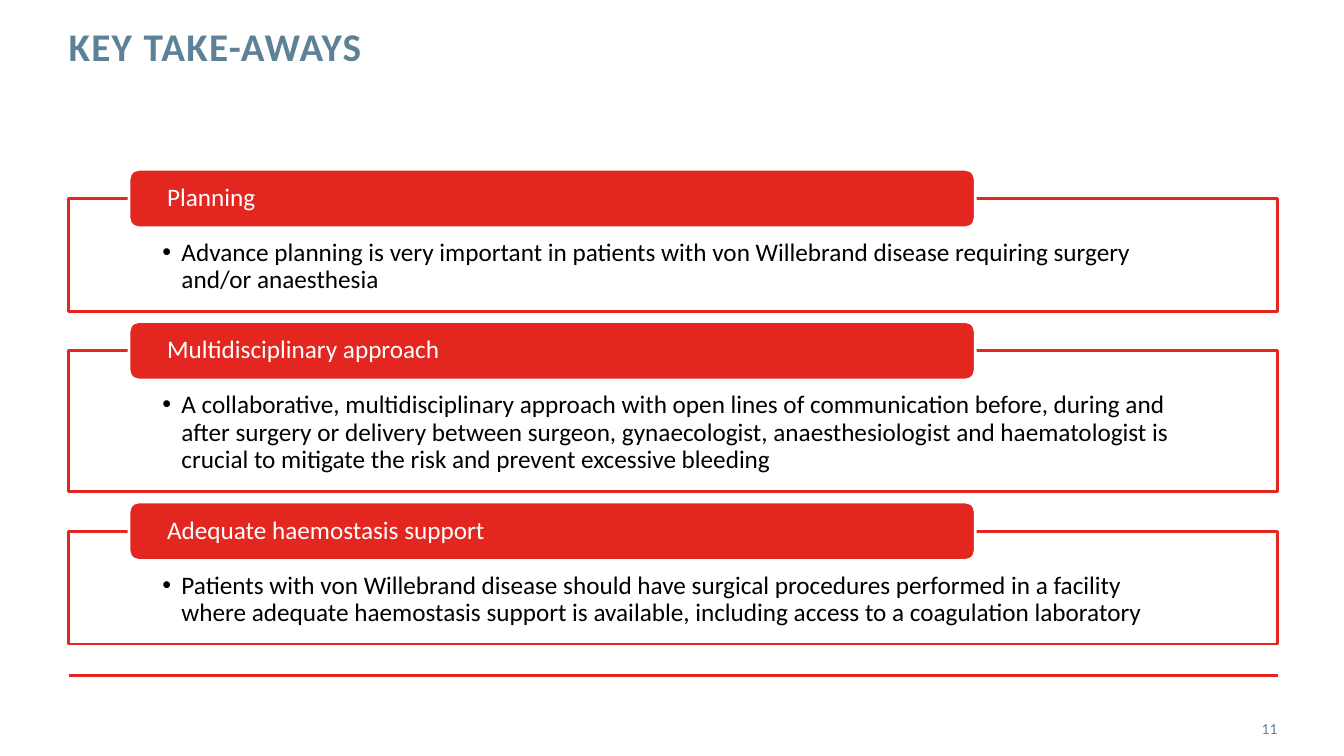
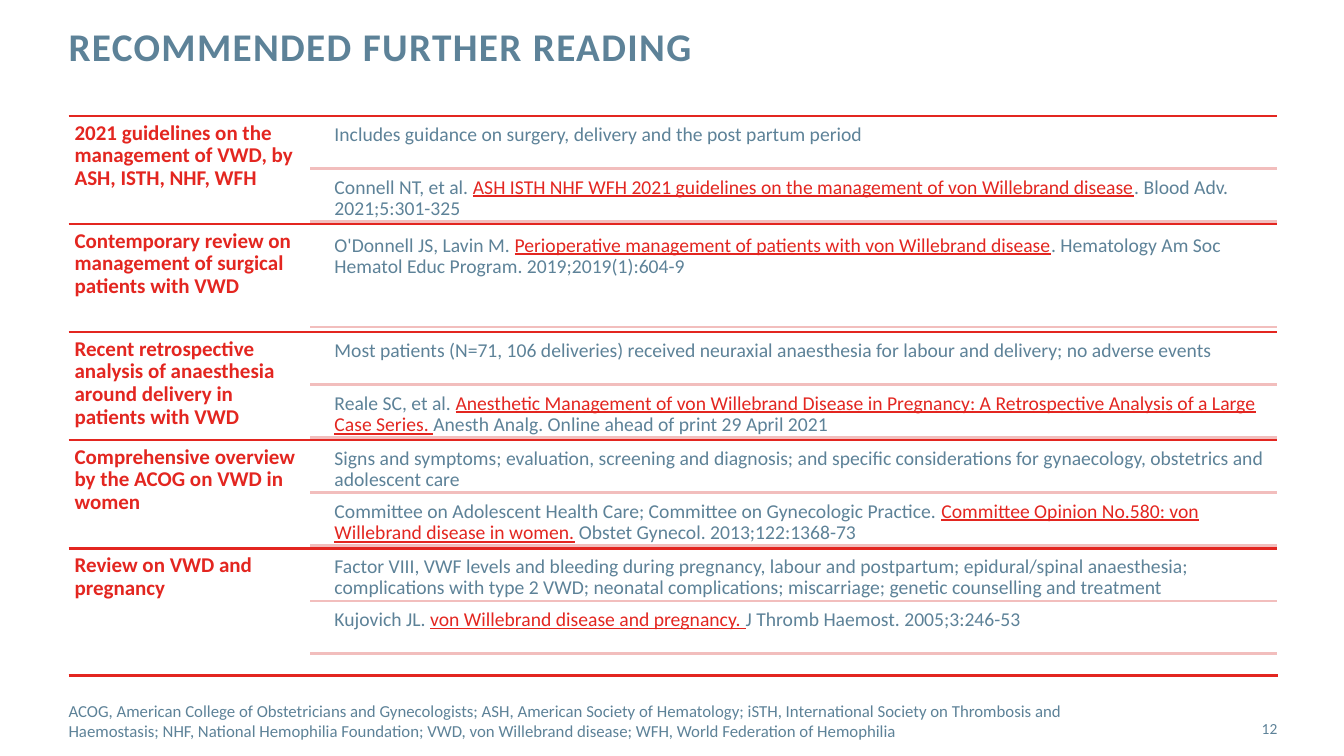
from lxml.etree import SubElement
from pptx import Presentation
from pptx.dml.color import RGBColor
from pptx.enum.shapes import MSO_CONNECTOR, MSO_SHAPE
from pptx.enum.text import MSO_ANCHOR, MSO_AUTO_SIZE, PP_ALIGN
from pptx.oxml.ns import qn
from pptx.util import Inches, Pt

FONT = "Calibri"
RED = "E32620"
PINK = "F2BEBD"
SLATE = "5D8298"
WHITE = "FFFFFF"
BLACK = "000000"

LEFT, WIDTH = 0.68, 11.99

TAKEAWAYS = [
    ("Planning", 1.12,
     "Advance planning is very important in patients with von Willebrand disease "
     "requiring surgery and/or anaesthesia"),
    ("Multidisciplinary approach", 1.4,
     "A collaborative, multidisciplinary approach with open lines of communication "
     "before, during and after surgery or delivery between surgeon, gynaecologist, "
     "anaesthesiologist and haematologist is crucial to mitigate the risk and prevent "
     "excessive bleeding"),
    ("Adequate haemostasis support", 1.12,
     "Patients with von Willebrand disease should have surgical procedures performed "
     "in a facility where adequate haemostasis support is available, including access "
     "to a coagulation laboratory"),
]

READINGS = [
    ("2021 guidelines on the management of VWD, by ASH, ISTH, NHF, WFH", [
        ("Includes guidance on surgery, delivery and the post partum period",),
        ("Connell NT, et al. ",
         "ASH ISTH NHF WFH 2021 guidelines on the management of von Willebrand disease",
         ". Blood Adv. 2021;5:301-325"),
    ]),
    ("Contemporary review on management of surgical patients with VWD", [
        ("O'Donnell JS, Lavin M. ",
         "Perioperative management of patients with von Willebrand disease",
         ". Hematology Am Soc Hematol Educ Program. 2019;2019(1):604-9"),
    ]),
    ("Recent retrospective analysis of anaesthesia around delivery in patients with VWD", [
        ("Most patients (N=71, 106 deliveries) received neuraxial anaesthesia for labour "
         "and delivery; no adverse events",),
        ("Reale SC, et al. ",
         "Anesthetic Management of von Willebrand Disease in Pregnancy: A Retrospective "
         "Analysis of a Large Case Series. ",
         "Anesth Analg. Online ahead of print 29 April 2021"),
    ]),
    ("Comprehensive overview by the ACOG on VWD in women", [
        ("Signs and symptoms; evaluation, screening and diagnosis; and specific "
         "considerations for gynaecology, obstetrics and adolescent care",),
        ("Committee on Adolescent Health Care; Committee on Gynecologic Practice. ",
         "Committee Opinion No.580: von Willebrand disease in women.",
         " Obstet Gynecol. 2013;122:1368-73"),
    ]),
    ("Review on VWD and pregnancy", [
        ("Factor VIII, VWF levels and bleeding during pregnancy, labour and postpartum; "
         "epidural/spinal anaesthesia; complications with type 2 VWD; neonatal "
         "complications; miscarriage; genetic counselling and treatment",),
        ("Kujovich JL. ", "von Willebrand disease and pregnancy. ",
         "J Thromb Haemost. 2005;3:246-53"),
    ]),
]

ABBREVIATIONS = (
    "ACOG, American College of Obstetricians and Gynecologists; ASH, American Society of "
    "Hematology; iSTH, International Society on Thrombosis and Haemostasis; NHF, National "
    "Hemophilia Foundation; VWD, von Willebrand disease; WFH, World Federation of Hemophilia"
)


def rgb(value):
    return RGBColor.from_string(value)


def add_run(paragraph, text, size, color, bold=False, underline=False):
    run = paragraph.add_run()
    run.text = text
    run.font.name = FONT
    run.font.size = Pt(size)
    run.font.bold = bold
    run.font.underline = underline
    run.font.color.rgb = rgb(color)
    return run


def set_frame(shape, insets=(0, 0, 0, 0), anchor=MSO_ANCHOR.TOP, align=PP_ALIGN.LEFT):
    frame = shape.text_frame
    frame.word_wrap = True
    frame.auto_size = MSO_AUTO_SIZE.NONE
    frame.vertical_anchor = anchor
    frame.margin_left, frame.margin_top, frame.margin_right, frame.margin_bottom = map(Inches, insets)
    paragraph = frame.paragraphs[0]
    paragraph.alignment = align
    return paragraph


def add_text_box(slide, left, top, width, height, **frame_options):
    box = slide.shapes.add_textbox(*map(Inches, (left, top, width, height)))
    return set_frame(box, **frame_options)


def add_rule(slide, left, right, top, color):
    rule = slide.shapes.add_connector(
        MSO_CONNECTOR.STRAIGHT, Inches(left), Inches(top), Inches(right), Inches(top))
    rule.line.color.rgb = rgb(color)
    rule.line.width = Pt(2)
    SubElement(rule._element.spPr, qn("a:effectLst"))


def add_panel(slide, preset, box, fill, outline):
    panel = slide.shapes.add_shape(preset, *map(Inches, box))
    panel.shadow.inherit = False
    panel.fill.solid()
    panel.fill.fore_color.rgb = rgb(fill)
    panel.line.color.rgb = rgb(outline)
    panel.line.width = Pt(2)
    return panel


def add_bullet(paragraph, indent):
    properties = paragraph._p.get_or_add_pPr()
    properties.set("marL", str(Inches(indent)))
    properties.set("indent", str(-Inches(indent)))
    SubElement(properties, qn("a:buFont"), typeface="Arial")
    SubElement(properties, qn("a:buChar"), char="•")


def start_slide(deck, heading, number):
    slide = deck.slides.add_slide(deck.slide_layouts[5])
    title = slide.shapes.title
    title.left, title.top, title.width, title.height = map(Inches, (LEFT, 0.27, 9.56, 0.88))
    paragraph = set_frame(title)
    paragraph.line_spacing = Pt(30)
    run = add_run(paragraph, heading, 28, SLATE, bold=True)
    run.font._element.set("spc", "100")
    add_rule(slide, LEFT, 12.68, 6.7, RED)
    page = add_text_box(slide, 11.81, 7.03, 0.86, 0.4,
                        anchor=MSO_ANCHOR.MIDDLE, align=PP_ALIGN.RIGHT)
    add_run(page, str(number), 11, SLATE)
    return slide


def add_takeaway(slide, left, top, width, height, label, message):
    body = add_panel(slide, MSO_SHAPE.RECTANGLE, (left, top, width, height), WHITE, RED)
    paragraph = set_frame(body, insets=(0.93, 0.41, 0.93, 0.14))
    add_bullet(paragraph, 0.19)
    paragraph.line_spacing = 0.9
    add_run(paragraph, message, 18, BLACK)

    tab_height = 0.58
    tab = add_panel(slide, MSO_SHAPE.ROUNDED_RECTANGLE,
                    (left + 0.6, top - tab_height / 2, width * 0.7, tab_height), RED, WHITE)
    paragraph = set_frame(tab, insets=(0.35, 0, 0.35, 0), anchor=MSO_ANCHOR.MIDDLE)
    paragraph.line_spacing = 0.9
    add_run(paragraph, label, 18, WHITE)


def add_reading(slide, left, top, width, height, topic, entries):
    right = left + width
    topic_width = width / 5
    entry_left = left + topic_width + 0.18
    insets = (0.06,) * 4
    gap = 0.05 / len(entries)
    entry_height = (height - gap * (len(entries) + 1)) / len(entries)

    add_rule(slide, left, right, top, RED)
    paragraph = add_text_box(slide, left, top, topic_width, height, insets=insets)
    paragraph.line_spacing = 0.9
    add_run(paragraph, topic, 15, RED, bold=True)

    for row, parts in enumerate(entries):
        entry_top = top + gap + row * (entry_height + gap)
        paragraph = add_text_box(slide, entry_left, entry_top, right - entry_left,
                                 entry_height, insets=insets)
        paragraph.line_spacing = 0.9
        for position, text in enumerate(parts):
            cited = position == 1
            add_run(paragraph, text, 14, RED if cited else SLATE, underline=cited)
        add_rule(slide, left + topic_width, right, entry_top + entry_height, PINK)


def build_takeaways(deck):
    slide = start_slide(deck, "KEY TAKE-AWAYS", 11)
    top = 1.97
    for label, height, message in TAKEAWAYS:
        add_takeaway(slide, LEFT, top, WIDTH, height, label, message)
        top += height + 0.39


def build_readings(deck):
    slide = start_slide(deck, "RECOMMENDED FURTHER READING", 12)
    top, bottom = 1.15, 6.51
    height = (bottom - top) / len(READINGS)
    for index, (topic, entries) in enumerate(READINGS):
        add_reading(slide, LEFT, top + index * height, WIDTH, height, topic, entries)
    footnote = add_text_box(slide, LEFT, 6.95, 10.71, 0.4, anchor=MSO_ANCHOR.MIDDLE)
    add_run(footnote, ABBREVIATIONS, 12, SLATE)


def main():
    deck = Presentation()
    deck.slide_width, deck.slide_height = Inches(13.33), Inches(7.5)
    build_takeaways(deck)
    build_readings(deck)
    deck.save("out.pptx")


if __name__ == "__main__":
    main()
